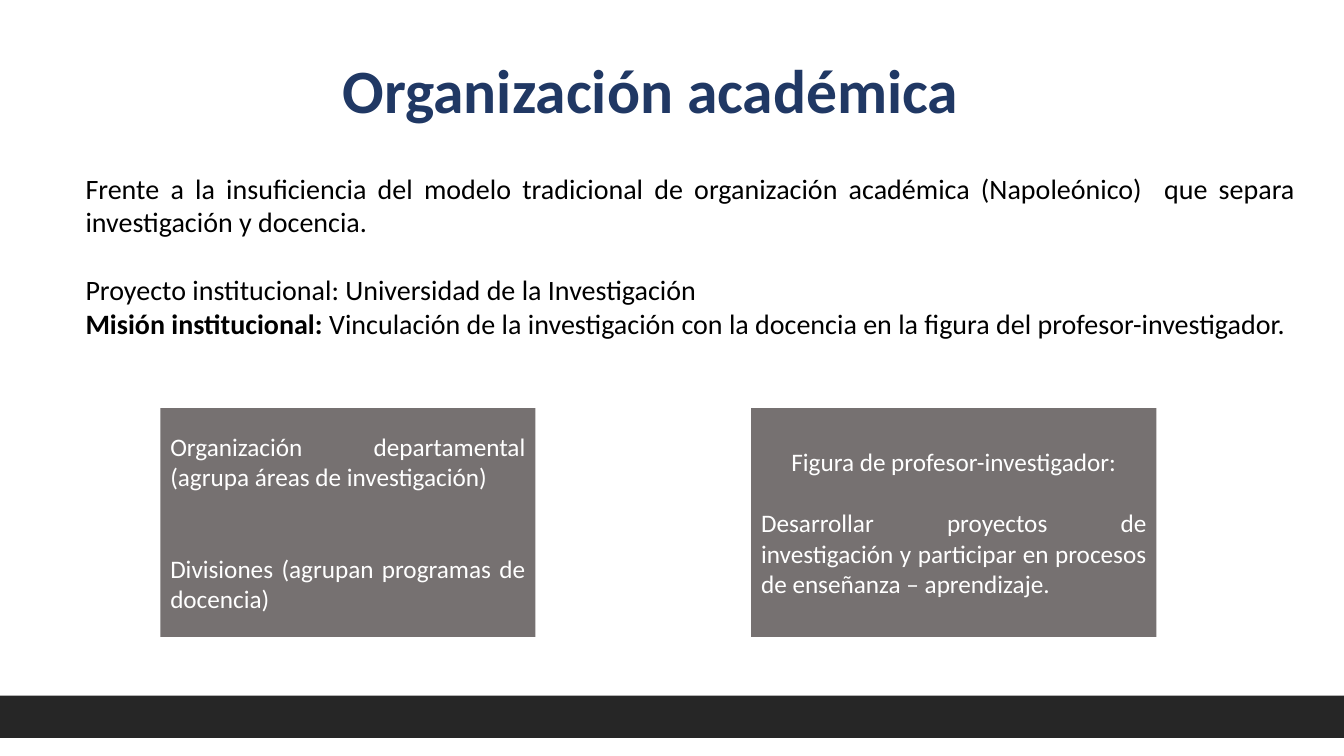
import dataclasses

import pptx
import pptx.dml.color
import pptx.enum.shapes
import pptx.enum.text
import pptx.util

Inches = pptx.util.Inches
Pt = pptx.util.Pt
ALIGN = pptx.enum.text.PP_ALIGN
ANCHOR = pptx.enum.text.MSO_ANCHOR


@dataclasses.dataclass(frozen=True)
class Theme:
    font: str = "Calibri"
    navy: str = "203864"
    black: str = "000000"
    white: str = "FFFFFF"
    gray: str = "767171"
    charcoal: str = "262626"
    title_size: int = 44
    body_size: int = 20
    panel_size: int = 18
    line_height: float = 1.22


class SlideBuilder:
    """Draws text, panels and bars on one slide in a shared style."""

    def __init__(self, slide, theme):
        self.slide = slide
        self.theme = theme

    def fill_text(self, frame, paragraphs, size, color, anchor=ANCHOR.TOP, spacing=None):
        for name, value in {"word_wrap": True, "vertical_anchor": anchor}.items():
            setattr(frame, name, value)
        for index, (align, blank_lines, runs) in enumerate(paragraphs):
            paragraph = frame.add_paragraph() if index else frame.paragraphs[0]
            gap = Pt(round(blank_lines * size * self.theme.line_height, 1))
            layout = {"alignment": align, "space_before": gap, "line_spacing": spacing}
            for name, value in layout.items():
                setattr(paragraph, name, value)
            for words, bold in runs:
                run = paragraph.add_run()
                run.text = words
                style = {"name": self.theme.font, "size": Pt(size), "bold": bold}
                for name, value in style.items():
                    setattr(run.font, name, value)
                run.font.color.rgb = pptx.dml.color.RGBColor.from_string(color)

    def text(self, box, paragraphs, size, color, **layout):
        label = self.slide.shapes.add_textbox(*map(Inches, box))
        self.fill_text(label.text_frame, paragraphs, size, color, **layout)

    def block(self, box, color):
        rectangle = self.slide.shapes.add_shape(
            pptx.enum.shapes.MSO_SHAPE.RECTANGLE, *map(Inches, box))
        rectangle.shadow.inherit = False
        rectangle.fill.solid()
        rectangle.fill.fore_color.rgb = pptx.dml.color.RGBColor.from_string(color)
        rectangle.line.fill.background()
        return rectangle

    def panel(self, box, paragraphs):
        panel = self.block(box, self.theme.gray)
        self.fill_text(panel.text_frame, paragraphs, self.theme.panel_size,
                       self.theme.white, anchor=ANCHOR.MIDDLE)


def main():
    theme = Theme()
    presentation = pptx.Presentation()
    presentation.slide_width = Inches(13.33)
    presentation.slide_height = Inches(7.5)
    slide = presentation.slides.add_slide(presentation.slide_layouts[6])
    builder = SlideBuilder(slide, theme)

    builder.text((3.3, 0.2, 9.5, 1.45),
                 [(ALIGN.LEFT, 0, [("Organización académica", True)])],
                 theme.title_size, theme.navy, anchor=ANCHOR.MIDDLE, spacing=0.9)

    mission = [
        (ALIGN.JUSTIFY, 0, [("Frente a la insuficiencia del modelo tradicional de organización "
                             "académica (Napoleónico)  que separa investigación y docencia.",
                             False)]),
        (ALIGN.JUSTIFY, 1, [("Proyecto institucional: Universidad de la Investigación", False)]),
        (ALIGN.JUSTIFY, 0, [("Misión institucional: ", True),
                            ("Vinculación de la investigación con la docencia en la figura "
                             "del profesor-investigador.", False)]),
    ]
    builder.text((0.75, 1.65, 12.2, 2.09), mission, theme.body_size, theme.black)

    structure = [
        (ALIGN.JUSTIFY, 0,
         [("Organización departamental (agrupa áreas de investigación)", False)]),
        (ALIGN.JUSTIFY, 2, [("Divisiones (agrupan programas de docencia)", False)]),
    ]
    professor = [
        (ALIGN.CENTER, 0, [("Figura de profesor-investigador:", False)]),
        (ALIGN.JUSTIFY, 1, [("Desarrollar proyectos de investigación y participar en procesos "
                             "de enseñanza – aprendizaje.", False)]),
    ]
    panel_top, panel_height = 4.05, 2.27
    for left, width, paragraphs in ((1.59, 3.72, structure), (7.45, 4.02, professor)):
        builder.panel((left, panel_top, width, panel_height), paragraphs)

    builder.block((0, 6.9, 13.33, 0.42), theme.charcoal)
    presentation.save("out.pptx")


if __name__ == "__main__":
    main()
